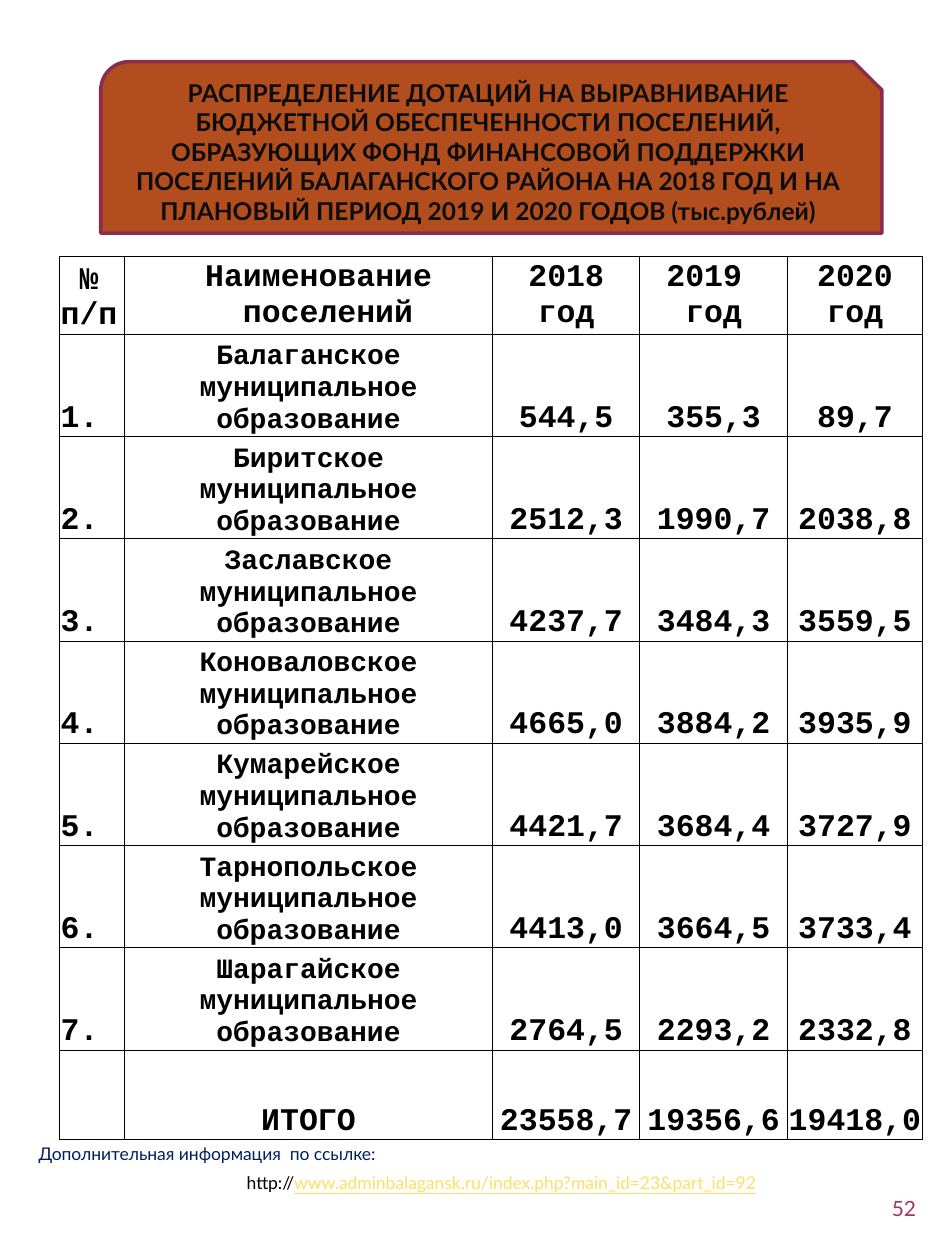
"""Build the slide on budget equalisation grants to the settlements of a district."""
from dataclasses import dataclass

import lxml.etree
import pptx
import pptx.dml.color
import pptx.enum.shapes
import pptx.enum.text
import pptx.oxml.ns
import pptx.util

Pt = pptx.util.Pt
ALIGN = pptx.enum.text.PP_ALIGN
ANCHOR = pptx.enum.text.MSO_ANCHOR


@dataclass(frozen=True)
class Theme:
    """Colours, fonts and type sizes."""
    black: str = "000000"
    title_fill: str = "B24D1D"
    title_line: str = "882D4D"
    title_text: str = "0D0D0D"
    note: str = "002060"
    link: str = "FFDE66"
    number: str = "A2365C"
    body_font: str = "Lato"
    table_font: str = "Courier New"
    title_size: int = 14
    table_size: int = 18
    name_size: int = 16
    note_size: int = 10
    number_size: int = 12


def rgb(value):
    """Turn a hex string into a colour."""
    return pptx.dml.color.RGBColor.from_string(value)


def write(paragraph, text, *, size, font, color, bold=False, underline=False, align=None):
    """Add formatted text to a paragraph."""
    if align is not None:
        paragraph.alignment = align
    run = paragraph.add_run()
    run.text = text
    run.font.size = Pt(size)
    run.font.name = font
    run.font.bold = bold
    run.font.underline = underline
    run.font.color.rgb = rgb(color)


class SlideBuilder:
    """Hold the theme and the current slide."""

    def __init__(self, slide, theme):
        """Keep the slide and its theme."""
        self.slide = slide
        self.theme = theme

    def banner(self, box, text):
        """Add the title in a snipped and rounded rectangle."""
        theme = self.theme
        kind = pptx.enum.shapes.MSO_SHAPE.SNIP_ROUND_RECTANGLE
        shape = self.slide.shapes.add_shape(kind, *map(Pt, box))
        shape.shadow.inherit = False
        shape.fill.solid()
        shape.fill.fore_color.rgb = rgb(theme.title_fill)
        shape.line.color.rgb = rgb(theme.title_line)
        shape.line.width = Pt(2)
        frame = shape.text_frame
        frame.word_wrap = True
        frame.vertical_anchor = ANCHOR.MIDDLE
        write(frame.paragraphs[0], text, size=theme.title_size, font=theme.body_font,
              color=theme.title_text, bold=True, align=ALIGN.CENTER)

    def text(self, box, runs, size, align=ALIGN.LEFT):
        """Add one line of text made of (text, colour, underline) runs."""
        frame = self.slide.shapes.add_textbox(*map(Pt, box)).text_frame
        frame.word_wrap = True
        for text, color, underline in runs:
            write(frame.paragraphs[0], text, size=size, font=self.theme.body_font,
                  color=color, underline=underline, align=align)

    def border(self, cell):
        """Draw a thin line on each side of a cell."""
        properties = cell._tc.get_or_add_tcPr()
        for side in ("lnL", "lnR", "lnT", "lnB"):
            line = lxml.etree.SubElement(
                properties, pptx.oxml.ns.qn(f"a:{side}"), w=str(Pt(0.5)))
            fill = lxml.etree.SubElement(line, pptx.oxml.ns.qn("a:solidFill"))
            lxml.etree.SubElement(fill, pptx.oxml.ns.qn("a:srgbClr"), val=self.theme.black)

    def cell(self, cell, text, size, align, anchor, indent):
        """Format one cell and write its paragraphs."""
        cell.margin_left = Pt(indent)
        cell.margin_right = cell.margin_top = Pt(0.7)
        cell.margin_bottom = Pt(0)
        cell.vertical_anchor = anchor
        self.border(cell)
        cell.fill.background()
        frame = cell.text_frame
        for index, line in enumerate(text.split("\n")):
            paragraph = frame.add_paragraph() if index else frame.paragraphs[0]
            write(paragraph, line, size=size, font=self.theme.table_font,
                  color=self.theme.black, bold=True, align=align)

    def table(self, left, top, widths, heights, rows):
        """Add the grid with a header row and a total row."""
        theme = self.theme
        table = self.slide.shapes.add_table(
            len(rows), len(widths), Pt(left), Pt(top),
            Pt(sum(widths)), Pt(sum(heights))).table
        table.first_row = table.horz_banding = False
        for column, width in zip(table.columns, widths):
            column.width = Pt(width)
        for row, height in zip(table.rows, heights):
            row.height = Pt(height)
        for r, values in enumerate(rows):
            for c, value in enumerate(values):
                header = r == 0
                name = c == 1 and 0 < r < len(rows) - 1
                self.cell(
                    table.cell(r, c), value,
                    size=theme.name_size if name else theme.table_size,
                    align=ALIGN.CENTER if c else ALIGN.LEFT,
                    anchor=ANCHOR.MIDDLE if header and c else ANCHOR.BOTTOM,
                    indent=23 if header and c == 1 else 0.7)


def main():
    """Compose the slide and save it."""
    theme = Theme()
    presentation = pptx.Presentation()
    presentation.slide_width, presentation.slide_height = Pt(540), Pt(720)
    builder = SlideBuilder(
        presentation.slides.add_slide(presentation.slide_layouts[6]), theme)

    grants = [
        ("Балаганское", "544,5", "355,3", "89,7"),
        ("Биритское", "2512,3", "1990,7", "2038,8"),
        ("Заславское", "4237,7", "3484,3", "3559,5"),
        ("Коноваловское", "4665,0", "3884,2", "3935,9"),
        ("Кумарейское", "4421,7", "3684,4", "3727,9"),
        ("Тарнопольское", "4413,0", "3664,5", "3733,4"),
        ("Шарагайское", "2764,5", "2293,2", "2332,8"),
    ]
    header = (" № п/п", "Наименование  поселений", "2018 год", "2019 \nгод", "2020 год")
    body = [(f"{number}.", f"{name} муниципальное образование", *amounts)
            for number, (name, *amounts) in enumerate(grants, 1)]
    total = ("", "ИТОГО", "23558,7", "19356,6", "19418,0")
    builder.table(34, 146.3, (37.2, 210.2, 84.3, 84.3, 77.2),
                  (44.8, *[58.45] * len(body), 51.2), [header, *body, total])

    builder.banner((57.6, 35.2, 446.4, 98), (
        "РАСПРЕДЕЛЕНИЕ ДОТАЦИЙ НА ВЫРАВНИВАНИЕ БЮДЖЕТНОЙ ОБЕСПЕЧЕННОСТИ ПОСЕЛЕНИЙ, "
        "ОБРАЗУЮЩИХ ФОНД ФИНАНСОВОЙ ПОДДЕРЖКИ ПОСЕЛЕНИЙ БАЛАГАНСКОГО РАЙОНА НА 2018 ГОД "
        "И НА ПЛАНОВЫЙ ПЕРИОД 2019 И 2020 ГОДОВ (тыс.рублей)"))
    builder.text((486, 679.7, 44.6, 26), [("52", theme.number, False)],
                 theme.number_size, ALIGN.RIGHT)
    builder.text((133.9, 666, 323.3, 19.4), [
        ("http://", theme.black, False),
        ("www.adminbalagansk.ru/index.php?main_id=23&part_id=92", theme.link, True),
    ], theme.note_size)
    builder.text((15, 649.4, 270, 19.4),
                 [("Дополнительная информация  по ссылке:", theme.note, False)],
                 theme.note_size)
    presentation.save("out.pptx")


if __name__ == "__main__":
    main()
